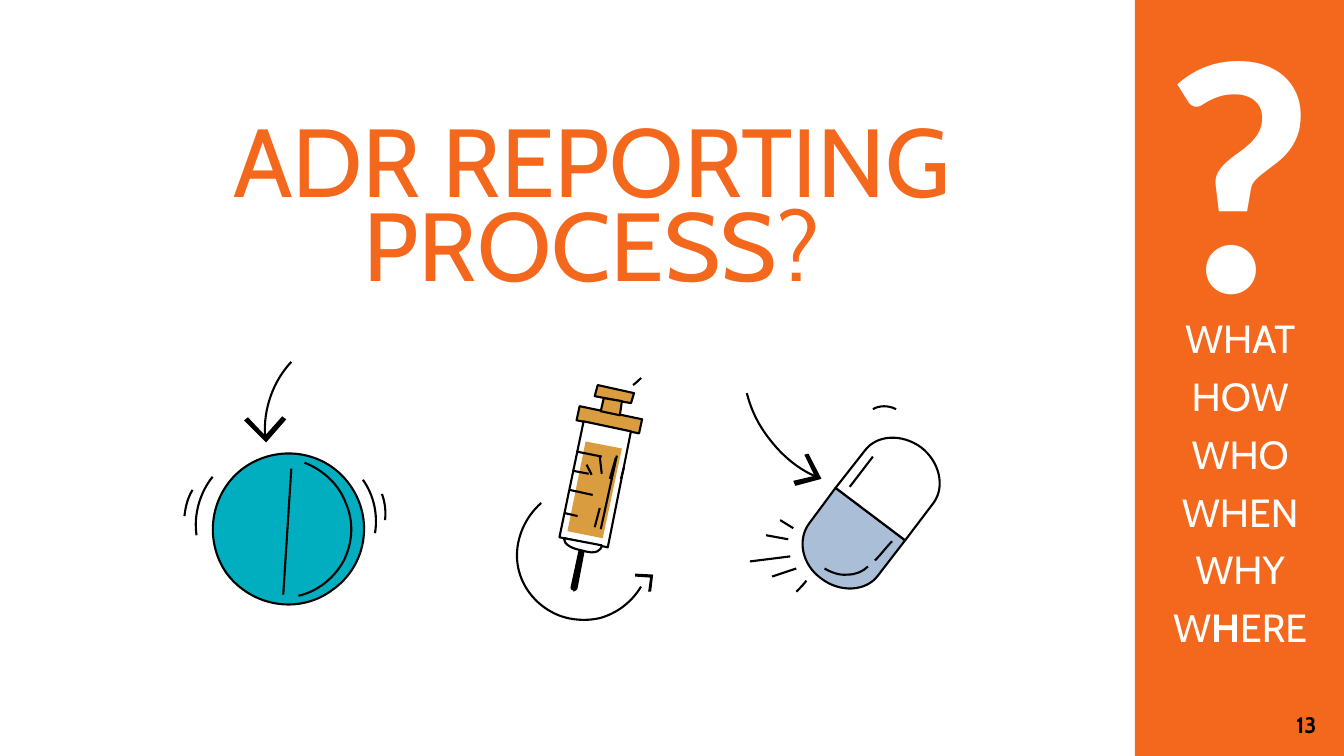
import math

import pptx
import pptx.dml.color
import pptx.enum.shapes
import pptx.enum.text
import pptx.util
from lxml import etree

Pt = pptx.util.Pt
qn = pptx.oxml.ns.qn
COLORS = {"orange": "F3681C", "white": "FFFFFF", "ink": "000000",
          "amber": "D99C3F", "teal": "00AEBF", "blue": "AABED7"}
GRID = 0.72
SEGMENT_TAGS = {"M": "a:moveTo", "L": "a:lnTo", "C": "a:cubicBezTo", "Z": "a:close"}
SIDE_WORDS = ["WHAT", "HOW", "WHO", "WHEN", "WHY", "WHERE"]

CAPSULE_OUTLINES = [
    ("blue", "M 115 274 C 133 288 159 287 171 271 L 198 236 L 129 184 L 103 219 "
             "C 97 227 95 237 97 247 C 99 257 105 267 115 274 Z"),
    ("white", "M 198 236 L 226 199 C 238 183 232 158 214 144 C 195 130 170 131 158 147 L 129 184 Z"),
    (None, "M 118 264 C 125 268 133 271 141 270 C 149 270 156 267 161 262"),
    (None, "M 168 256 C 174 250 179 243 185 237"),
    (None, "M 166 106 C 172 102 182 102 189 106"),
    (None, "M 41 90 C 45 106 52 121 63 135 C 75 151 91 165 110 173"),
    ("ink", "M 89 182 L 115 175 L 102 150 L 98 151 L 108 172 L 87 177 Z"),
    (None, "M 100 276 C 97 280 94 283 90 287"),
]
CAPSULE_LINES = [(143, 183, 166, 153), (84, 252, 44, 257), (90, 264, 66, 272),
                 (82, 235, 60, 231), (87, 224, 74, 216)]

SYRINGE_OUTLINES = [
    ("ink", "M 77 243 C 76 243 74 244 74 246 L 66 283 C 66 284 67 286 69 286 "
            "C 69 286 69 287 69 287 C 71 287 72 285 73 284 L 80 247 C 81 245 80 244 78 243 Z"),
    ("amber", "M 75 103 L 72 117 L 134 130 L 137 116 Z"),
    ("amber", "M 93 82 L 90 93 L 126 100 L 129 90 Z"),
    ("amber", "M 99 95 L 96 108 L 115 112 L 117 98 Z"),
    ("white", "M 79 118 L 55 233 L 103 243 L 126 128 Z"),
    ("liquid", "M 81 138 L 63 227 L 98 234 L 117 145 Z"),
    ("white", "M 60 234 C 60 234 57 242 77 246 C 81 247 84 248 87 248 C 97 248 97 241 97 241 Z"),
    (None, "M 136 282 C 127 297 113 308 96 313 C 80 317 61 315 47 307 "
           "C 27 296 14 276 13 254 C 12 234 21 213 37 199"),
    ("ink", "M 130 269 L 148 270 L 146 287 L 143 287 L 145 273 L 130 272 Z"),
    (None, "M 128 82 C 131 80 134 77 136 75"),
]
SYRINGE_LINES = [(72, 148, 97, 153), (68, 167, 84, 170), (65, 186, 88, 191),
                 (60, 209, 73, 212), (112, 152, 96, 225), (95, 204, 90, 223),
                 (111, 154, 105, 175), (95, 153, 97, 170), (82, 161, 87, 171),
                 (116, 175, 119, 164)]

TABLET_OUTLINES = [
    ("teal", "M 230 285 C 264 261 271 214 247 181 C 223 147 176 140 142 164 "
             "C 109 188 101 235 125 269 C 150 302 197 310 230 285 Z"),
    (None, "M 202 159 C 220 166 236 180 243 199 C 251 217 250 238 241 256 C 232 273 215 287 196 291"),
    (None, "M 189 59 C 171 78 161 106 163 133"),
    ("ink", "M 164 139 L 184 116 L 180 113 L 163 132 L 146 114 L 142 117 Z"),
    (None, "M 111 173 C 98 189 92 211 95 231"),
    (None, "M 91 186 C 86 194 84 203 83 212"),
    (None, "M 260 176 C 271 191 275 211 272 229"),
    (None, "M 279 190 C 282 199 283 207 282 216"),
]
TABLET_LINES = [(189, 165, 181, 290)]


def rgb(name):
    return pptx.dml.color.RGBColor.from_string(COLORS[name])


def rotate(point, degrees):
    x, y = point
    c, d = math.cos(math.radians(degrees)), math.sin(math.radians(degrees))
    return x * c - y * d, x * d + y * c


def read_segments(outline, place, rotation):
    segments = []
    for token in outline.split():
        if token in SEGMENT_TAGS:
            segments.append((token, []))
        else:
            segments[-1][1].append(float(token))
    return [(kind, [rotate(place(*xy), -rotation) for xy in zip(v[::2], v[1::2])])
            for kind, v in segments]


def curve_points(segments):
    points = []
    for kind, ends in segments:
        if kind == "C":
            corners = [points[-1]] + ends
            for i in range(1, 21):
                t, u = i / 20, 1 - i / 20
                weights = (u**3, 3 * u * u * t, 3 * u * t * t, t**3)
                points.append(tuple(sum(w * c[k] for w, c in zip(weights, corners)) for k in (0, 1)))
        else:
            points += ends
    return points


def add_outline(shapes, segments, rotation):
    xs, ys = zip(*curve_points(segments))
    x0, y0, width, height = min(xs), min(ys), max(xs) - min(xs), max(ys) - min(ys)
    builder = shapes.build_freeform(int(x0), int(y0))
    builder.add_line_segments([(int(max(xs)), int(max(ys)))], close=False)
    sp = builder.convert_to_shape()
    cx, cy = rotate((x0 + width / 2, y0 + height / 2), rotation)
    sp.left, sp.top = int(cx - width / 2), int(cy - height / 2)
    sp.width, sp.height = int(width), int(height)
    sp.rotation = rotation
    trace = sp.element.find(".//" + qn("a:path"))
    trace.set("w", str(int(width)))
    trace.set("h", str(int(height)))
    for child in list(trace):
        trace.remove(child)
    for kind, ends in segments:
        node = etree.SubElement(trace, qn(SEGMENT_TAGS[kind]))
        for x, y in ends:
            etree.SubElement(node, qn("a:pt"), x=str(round(x - x0)), y=str(round(y - y0)))
    return sp


def set_ink_line(sp):
    sp.line.color.rgb = rgb("ink")
    sp.line.width = Pt(1.5)


def add_icon(s, left, top, outlines, lines, rotation=0):
    shapes = s.shapes.add_group_shape().shapes

    def place(x, y):
        return Pt(left + x * GRID), Pt(top + y * GRID)

    for fill, outline in outlines:
        sp = add_outline(shapes, read_segments(outline, place, rotation), rotation)
        sp.shadow.inherit = False
        if fill:
            sp.fill.solid()
            sp.fill.fore_color.rgb = rgb("amber" if fill == "liquid" else fill)
        else:
            sp.fill.background()
        if fill in ("ink", "liquid"):
            sp.line.fill.background()
        else:
            set_ink_line(sp)
    for x1, y1, x2, y2 in lines:
        sp = shapes.add_connector(pptx.enum.shapes.MSO_CONNECTOR.STRAIGHT,
                                  *place(x1, y1), *place(x2, y2))
        set_ink_line(sp)
        etree.SubElement(sp.element.spPr, qn("a:effectLst"))


def format_run(r, size, color, font, bold):
    r.font.size, r.font.name, r.font.bold = Pt(size), font, bold
    r.font.color.rgb = rgb(color)


def format_text(sp, paragraphs, inset, size, color, font="Cabin", bold=False,
                align="CENTER", spacing=None, gap=0, wrap=True):
    tf = sp.text_frame
    tf.word_wrap = wrap
    tf.auto_size = pptx.enum.text.MSO_AUTO_SIZE.NONE
    tf.vertical_anchor = pptx.enum.text.MSO_ANCHOR.MIDDLE
    tf.margin_left = tf.margin_right = tf.margin_top = tf.margin_bottom = Pt(inset)
    tf.text = "\n".join(paragraphs)
    for i, p in enumerate(tf.paragraphs):
        p.alignment = getattr(pptx.enum.text.PP_ALIGN, align)
        p.line_spacing = spacing
        p.space_before = Pt(gap if i else 0)
        for r in p.runs:
            format_run(r, size, color, font, bold)


def add_title(s, left, top, width, height):
    sp = s.shapes.title
    sp.left, sp.top, sp.width, sp.height = Pt(left), Pt(top), Pt(width), Pt(height)
    format_text(sp, ["ADR REPORTING PROCESS?"], 7.2, 69, "orange", spacing=0.72)


def add_sidebar(s, left, top, width, height):
    shapes = s.shapes.add_group_shape().shapes
    sp = shapes.add_shape(pptx.enum.shapes.MSO_SHAPE.RECTANGLE,
                          Pt(left), Pt(top), Pt(width), Pt(height))
    sp.shadow.inherit = False
    sp.fill.solid()
    sp.fill.fore_color.rgb = rgb("orange")
    sp.line.fill.background()
    mark = shapes.add_textbox(Pt(left), Pt(top - 36), Pt(width), Pt(335))
    format_text(mark, ["?"], 3.6, 239, "white", font="Calibri", bold=True, spacing=0.9)
    words = shapes.add_textbox(Pt(left + 21.5), Pt(top + 228.3), Pt(width - 42), Pt(237))
    format_text(words, SIDE_WORDS, 5.8, 28, "white", spacing=0.9, gap=11)
    p = words.text_frame.paragraphs[-1]
    p.text = "W"
    for text in ("H", "ERE"):
        p.add_run().text = text
    for r in p.runs:
        format_run(r, 28, "white", "Cabin", r.text == "H")
    number = shapes.add_textbox(Pt(left + width - 41.3), Pt(top + height - 35.2), Pt(25.2), Pt(25.2))
    format_text(number, ["13"], 3.6, 16, "ink", bold=True, align="RIGHT", wrap=False)


prs = pptx.Presentation()
prs.slide_width, prs.slide_height = Pt(960), Pt(540)
s = prs.slides.add_slide(prs.slide_layouts[5])
add_icon(s, 504, 216, CAPSULE_OUTLINES, CAPSULE_LINES, 217.2)
add_title(s, 71.6, 47.2, 702, 211.7)
add_icon(s, 360, 216, SYRINGE_OUTLINES, SYRINGE_LINES)
add_icon(s, 72, 216, TABLET_OUTLINES, TABLET_LINES, 144.1)
add_sidebar(s, 810.7, 0, 149.3, 540)
prs.save("out.pptx")
